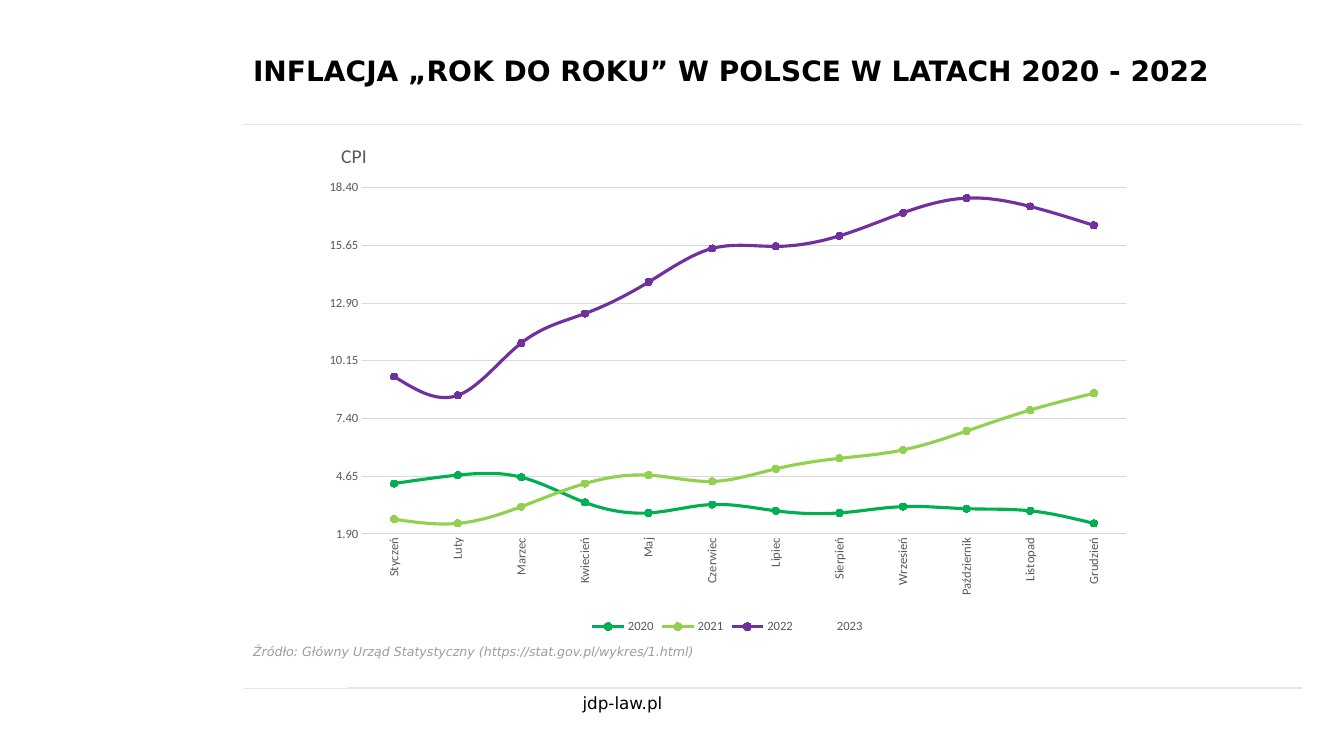
from dataclasses import dataclass

import lxml.etree
import pptx
import pptx.chart.data
import pptx.dml.color
import pptx.enum.chart
import pptx.enum.shapes
import pptx.enum.text
import pptx.oxml
import pptx.oxml.ns
import pptx.util

EMU_PER_PX = 9144
GREY_TEXT = "595959"
GRID_GREY = "D9D9D9"
RULE_GREY = "E6E6E6"
MONTHS = ["Styczeń", "Luty", "Marzec", "Kwiecień", "Maj", "Czerwiec", "Lipiec",
          "Sierpień", "Wrzesień", "Październik", "Listopad", "Grudzień"]


@dataclass(frozen=True)
class Box:
    left: int
    top: int
    width: int
    height: int


@dataclass(frozen=True)
class Rule:
    left: int
    right: int
    y: int


@dataclass(frozen=True)
class Label:
    text: str
    box: Box
    size: int
    color: str
    bold: bool = False
    italic: bool = False
    line_spacing: float = 1.0
    space_after: int = 0
    anchor: pptx.enum.text.MSO_ANCHOR = pptx.enum.text.MSO_ANCHOR.TOP


@dataclass(frozen=True)
class YearSeries:
    year: str
    color: str
    values: tuple


RULES = [Rule(241, 1291, 123), Rule(344, 1291, 682), Rule(241, 1291, 683)]
TITLE = Label("INFLACJA „ROK DO ROKU” W POLSCE W LATACH 2020 - 2022",
              Box(241, 52, 1047, 39), 20, "000000", bold=True, line_spacing=0.9,
              anchor=pptx.enum.text.MSO_ANCHOR.MIDDLE)
SOURCE = Label("Źródło: Główny Urząd Statystyczny (https://stat.gov.pl/wykres/1.html)",
               Box(241, 634, 1047, 32), 9, "9D9D9D", italic=True, space_after=6)
WEBSITE = Label("jdp-law.pl", Box(568, 682, 230, 30), 12, "000000")
CHART_BOX = Box(310, 117, 823, 516)
YEARS = [
    YearSeries("2020", "00B050",
               (4.3, 4.7, 4.6, 3.4, 2.9, 3.3, 3, 2.9, 3.2, 3.1, 3, 2.4)),
    YearSeries("2021", "92D050",
               (2.6, 2.4, 3.2, 4.3, 4.7, 4.4, 5, 5.5, 5.9, 6.8, 7.8, 8.6)),
    YearSeries("2022", "7030A0",
               (9.4, 8.5, 11, 12.4, 13.9, 15.5, 15.6, 16.1, 17.2, 17.9, 17.5, 16.6)),
    YearSeries("2023", "FFFFFF", (None,) * len(MONTHS)),
]


def px(length: int) -> pptx.util.Emu:
    return pptx.util.Emu(length * EMU_PER_PX)


def rgb(color: str) -> pptx.dml.color.RGBColor:
    return pptx.dml.color.RGBColor.from_string(color)


def style_line(line, color: str, points: float) -> None:
    line.color.rgb = rgb(color)
    line.width = pptx.util.Pt(points)


def style_font(font, name: str, size: int, color: str) -> None:
    font.name = name
    font.size = pptx.util.Pt(size)
    font.color.rgb = rgb(color)


def draw_rule(slide, rule: Rule) -> None:
    connector = slide.shapes.add_connector(
        pptx.enum.shapes.MSO_CONNECTOR.STRAIGHT,
        px(rule.left), px(rule.y), px(rule.right), px(rule.y))
    style_line(connector.line, RULE_GREY, 0.5)
    lxml.etree.SubElement(connector._element.spPr, pptx.oxml.ns.qn("a:effectLst"))


def write_label(shape, label: Label) -> None:
    box = label.box
    shape.left, shape.top = px(box.left), px(box.top)
    shape.width, shape.height = px(box.width), px(box.height)
    frame = shape.text_frame
    frame.word_wrap = True
    frame.auto_size = pptx.enum.text.MSO_AUTO_SIZE.NONE
    frame.vertical_anchor = label.anchor
    paragraph = frame.paragraphs[0]
    properties = paragraph._p.get_or_add_pPr()
    properties.set("marL", "0")
    properties.set("indent", "0")
    lxml.etree.SubElement(properties, pptx.oxml.ns.qn("a:buNone"))
    paragraph.alignment = pptx.enum.text.PP_ALIGN.LEFT
    paragraph.line_spacing = label.line_spacing
    paragraph.space_before = pptx.util.Pt(0)
    paragraph.space_after = pptx.util.Pt(label.space_after)
    run = paragraph.add_run()
    run.text = label.text
    style_font(run.font, "DejaVu Sans", label.size, label.color)
    run.font.bold = label.bold
    run.font.italic = label.italic


def place_chart_part(element, index: int, target: str, **fractions: float) -> None:
    for old_layout in element.findall(pptx.oxml.ns.qn("c:layout")):
        element.remove(old_layout)
    layout = pptx.oxml.parse_xml(f"<c:layout {pptx.oxml.ns.nsdecls('c')}/>")
    manual = lxml.etree.SubElement(layout, pptx.oxml.ns.qn("c:manualLayout"))
    settings = {"layoutTarget": target} if target else {}
    settings.update(xMode="edge", yMode="edge", **fractions)
    for tag, value in settings.items():
        lxml.etree.SubElement(manual, pptx.oxml.ns.qn(f"c:{tag}")).set("val", str(value))
    element.insert(index, layout)


def style_axes(chart) -> None:
    months, inflation = chart.category_axis, chart.value_axis
    for axis in (months, inflation):
        axis.major_tick_mark = pptx.enum.chart.XL_TICK_MARK.NONE
        axis.minor_tick_mark = pptx.enum.chart.XL_TICK_MARK.NONE
        style_font(axis.tick_labels.font, "Calibri", 9, GREY_TEXT)
    style_line(months.format.line, GRID_GREY, 0.75)
    months._element.find(pptx.oxml.ns.qn("c:txPr")).bodyPr.set("rot", "-5400000")
    inflation.format.line.fill.background()
    inflation.minimum_scale = 1.9
    inflation.maximum_scale = 18.5
    inflation.major_unit = 2.75
    inflation.tick_labels.number_format = "0.00"
    inflation.tick_labels.number_format_is_linked = False
    style_line(inflation.major_gridlines.format.line, GRID_GREY, 0.75)


def draw_inflation_chart(slide, box: Box, years: list[YearSeries]) -> None:
    data = pptx.chart.data.CategoryChartData()
    data.categories = MONTHS
    for year in years:
        data.add_series(year.year, year.values)
    chart = slide.shapes.add_chart(
        pptx.enum.chart.XL_CHART_TYPE.LINE_MARKERS,
        px(box.left), px(box.top), px(box.width), px(box.height), data).chart
    style_font(chart.font, "Calibri", 10, "000000")

    cpi = chart.chart_title.text_frame.paragraphs[0].add_run()
    cpi.text = "CPI"
    style_font(cpi.font, "Calibri", 14, GREY_TEXT)
    cpi.font.bold = False
    place_chart_part(chart.chart_title._element, 1, "", x=0.03, y=0.04)
    place_chart_part(chart._chartSpace.chart.plotArea, 0, "inner",
                     x=0.06, y=0.13, w=0.92, h=0.67)

    chart.has_legend = True
    chart.legend.position = pptx.enum.chart.XL_LEGEND_POSITION.BOTTOM
    chart.legend.include_in_layout = False
    style_font(chart.legend.font, "Calibri", 9, GREY_TEXT)
    style_axes(chart)

    chart.plots[0].vary_by_categories = False
    for series, year in zip(chart.plots[0].series, years):
        series.smooth = True
        style_line(series.format.line, year.color, 2.25)
        series.marker.style = pptx.enum.chart.XL_MARKER_STYLE.CIRCLE
        series.marker.size = 5
        series.marker.format.fill.solid()
        series.marker.format.fill.fore_color.rgb = rgb(year.color)
        style_line(series.marker.format.line, year.color, 0.75)


def main() -> None:
    presentation = pptx.Presentation()
    presentation.slide_width, presentation.slide_height = px(1333), px(750)
    slide = presentation.slides.add_slide(presentation.slide_layouts[1])
    for rule in RULES:
        draw_rule(slide, rule)
    write_label(slide.shapes.title, TITLE)
    write_label(slide.placeholders[1], SOURCE)
    write_label(slide.shapes.add_textbox(0, 0, 0, 0), WEBSITE)
    draw_inflation_chart(slide, CHART_BOX, YEARS)
    presentation.save("out.pptx")


if __name__ == "__main__":
    main()
